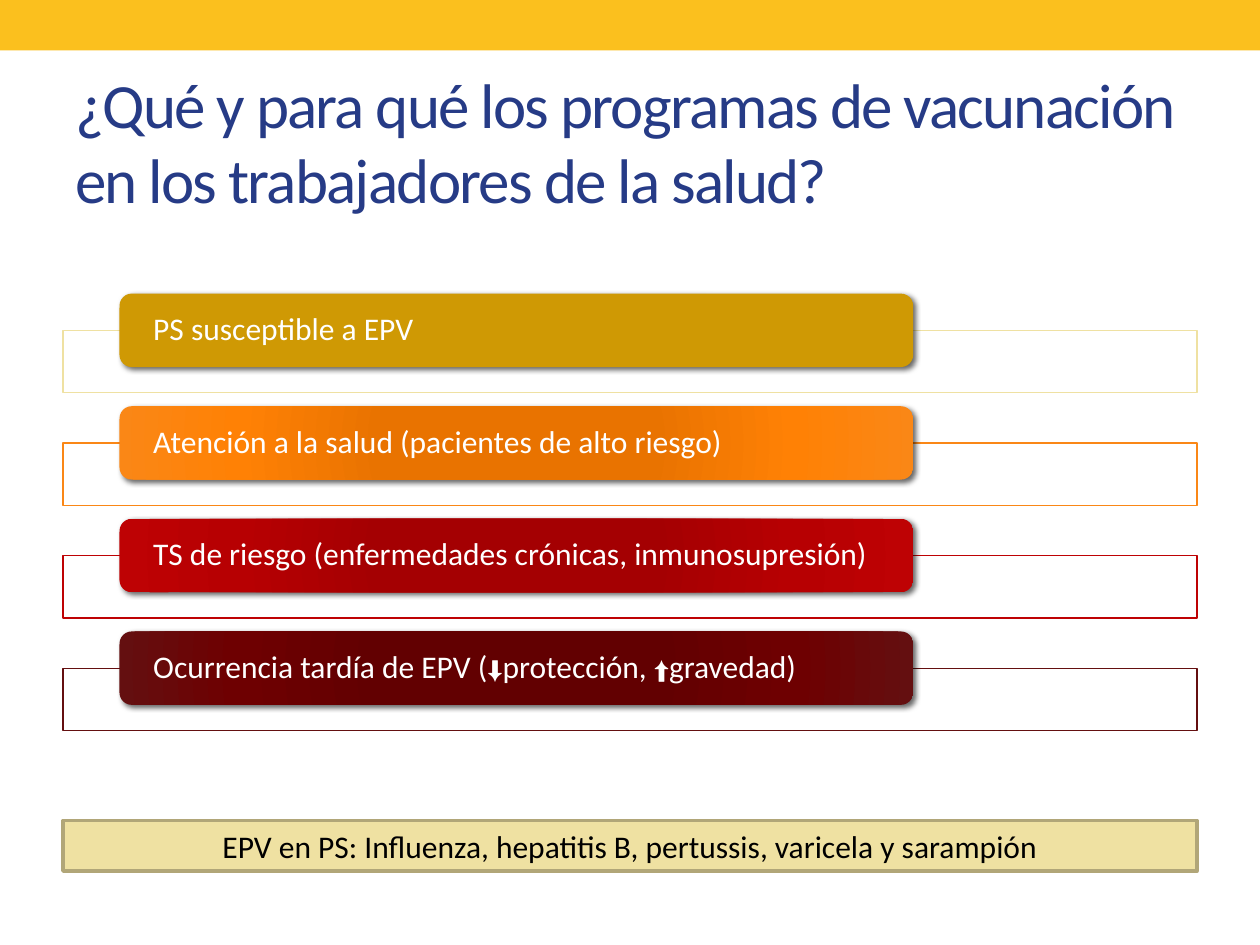
from lxml import etree
from pptx import Presentation
from pptx.dml.color import RGBColor
from pptx.enum import shapes, text
from pptx.oxml import parse_xml
from pptx.oxml.ns import nsdecls, qn
from pptx.util import Cm, Pt

WHITE = RGBColor(0xFF, 0xFF, 0xFF)
BLACK = RGBColor(0, 0, 0)
NAVY = RGBColor(0x26, 0x3B, 0x86)
YELLOW = RGBColor(0xFB, 0xC0, 0x1E)
SAND = RGBColor(0xEF, 0xE1, 0xA2)
SAND_EDGE = RGBColor(0xB1, 0xA6, 0x78)
GOLD = RGBColor(0xCF, 0x99, 0x04)
ORANGES = [RGBColor(0xE9, 0x73, 0x00), RGBColor(0xFF, 0x81, 0x05), RGBColor(0xFA, 0x87, 0x16)]
REDS = [RGBColor(0xA4, 0x00, 0x02), RGBColor(0xB7, 0x00, 0x02), RGBColor(0xBE, 0x02, 0x04)]
MAROONS = [RGBColor(0x62, 0x00, 0x01), RGBColor(0x6E, 0x00, 0x01), RGBColor(0x64, 0x0F, 0x10)]

MARGIN, FULL_WIDTH = Cm(1.27), Cm(22.86)
FIRST_ROW, ROW_PITCH = Cm(5.92), Cm(2.27)

# Runs of each reason: (text, size, font)
REASONS = [
    ([("PS susceptible a EPV", 18, "Calibri")], [GOLD], SAND),
    ([("Atención a la salud (pacientes de alto riesgo)", 18, "Calibri")], ORANGES, ORANGES[-1]),
    ([("TS de riesgo (enfermedades crónicas, inmunosupresión)", 18, "Calibri")], REDS, REDS[-1]),
    ([("Ocurrencia tardía de EPV (", 18, "Calibri"), ("⬇", 14, "Arial"),
      ("protección, ", 18, "Calibri"), ("⬆", 14, "Arial"),
      ("gravedad)", 18, "Calibri")], MAROONS, MAROONS[-1]),
]


def add_box(slide, kind, left, top, width, height, fill, edge=None, edge_width=0.75):
    box = slide.shapes.add_shape(kind, left, top, width, height)
    box.shadow.inherit = False
    box.fill.solid()
    box.fill.fore_color.rgb = fill
    if edge is None:
        box.line.fill.background()
    else:
        box.line.color.rgb = edge
        box.line.width = Pt(edge_width)
    return box


def add_runs(paragraph, runs, color):
    for words, size, font in runs:
        run = paragraph.add_run()
        run.text = words
        run.font.size = Pt(size)
        run.font.name = font
        run.font.color.rgb = color


def add_label(slide, left, top, width, height, runs, color):
    label = slide.shapes.add_textbox(left, top, width, height)
    frame = label.text_frame
    frame.word_wrap = True
    frame.vertical_anchor = text.MSO_ANCHOR.MIDDLE
    add_runs(frame.paragraphs[0], runs, color)
    return frame


def set_alpha(box, percent):
    color = box._element.spPr.find(qn("a:solidFill")).find(qn("a:srgbClr"))
    etree.SubElement(color, qn("a:alpha"), val=str(percent * 1000))


def set_radial_gradient(box, core, middle, rim):
    """Replace the solid fill by a gradient spreading from the centre."""
    stops = "".join(
        f'<a:gs pos="{position * 1000}"><a:srgbClr val="{color}"/></a:gs>'
        for position, color in ((0, core), (34, core), (70, middle), (100, rim)))
    gradient = parse_xml(
        f'<a:gradFill {nsdecls("a")} rotWithShape="1"><a:gsLst>{stops}</a:gsLst>'
        '<a:path path="circle"><a:fillToRect l="100000" t="100000" r="100000" b="100000"/>'
        '</a:path></a:gradFill>')
    properties = box._element.spPr
    properties.replace(properties.find(qn("a:solidFill")), gradient)


def add_drop_shadow(box):
    effects = box._element.spPr.find(qn("a:effectLst"))
    effects.append(parse_xml(
        f'<a:outerShdw {nsdecls("a")} blurRad="{Pt(3)}" dist="{Pt(2)}" dir="2700000" '
        'rotWithShape="0"><a:srgbClr val="000000"><a:alpha val="60000"/></a:srgbClr>'
        '</a:outerShdw>'))


def add_title(slide):
    words = "¿Qué y para qué los programas de vacunación en los trabajadores de la salud?"
    frame = add_label(slide, MARGIN, Cm(1.47), FULL_WIDTH, Cm(2.74),
                      [(words, 36, "Calibri")], NAVY)
    frame.paragraphs[0].runs[0].font._element.set("spc", "-100")


def add_reason(slide, top, runs, colors, edge):
    """Draw an outlined strip with a coloured, labelled tab over its upper edge."""
    strip = add_box(slide, shapes.MSO_SHAPE.RECTANGLE, MARGIN, top + Cm(0.74),
                    FULL_WIDTH, Cm(1.26), WHITE, edge)
    set_alpha(strip, 90)
    tab = add_box(slide, shapes.MSO_SHAPE.ROUNDED_RECTANGLE, Cm(2.41), top,
                  Cm(16), Cm(1.48), colors[0])
    if len(colors) > 1:
        set_radial_gradient(tab, *colors)
    add_drop_shadow(tab)
    frame = add_label(slide, Cm(2.49), top + Cm(0.08), Cm(15.85), Cm(1.32), runs, WHITE)
    frame.margin_left = frame.margin_right = Cm(0.6)
    frame.margin_top = frame.margin_bottom = 0
    frame.paragraphs[0].line_spacing = 0.9


def add_summary(slide):
    bar = add_box(slide, shapes.MSO_SHAPE.RECTANGLE, MARGIN, Cm(16.54), FULL_WIDTH, Cm(1.02),
                  SAND, SAND_EDGE, 2.08)
    bar.text_frame.word_wrap = True
    paragraph = bar.text_frame.paragraphs[0]
    paragraph.alignment = text.PP_ALIGN.CENTER
    words = "EPV en PS: Influenza, hepatitis B, pertussis, varicela y sarampión"
    add_runs(paragraph, [(words, 18, "Calibri")], BLACK)


def main():
    deck = Presentation()
    deck.slide_width, deck.slide_height = Cm(25.4), Cm(19.05)
    slide = deck.slides.add_slide(deck.slide_layouts[6])
    add_box(slide, shapes.MSO_SHAPE.RECTANGLE, 0, 0, deck.slide_width, Cm(1.02), YELLOW)
    add_title(slide)
    for row, (runs, colors, edge) in enumerate(REASONS):
        add_reason(slide, FIRST_ROW + row * ROW_PITCH, runs, colors, edge)
    add_summary(slide)
    deck.save("out.pptx")


if __name__ == "__main__":
    main()
